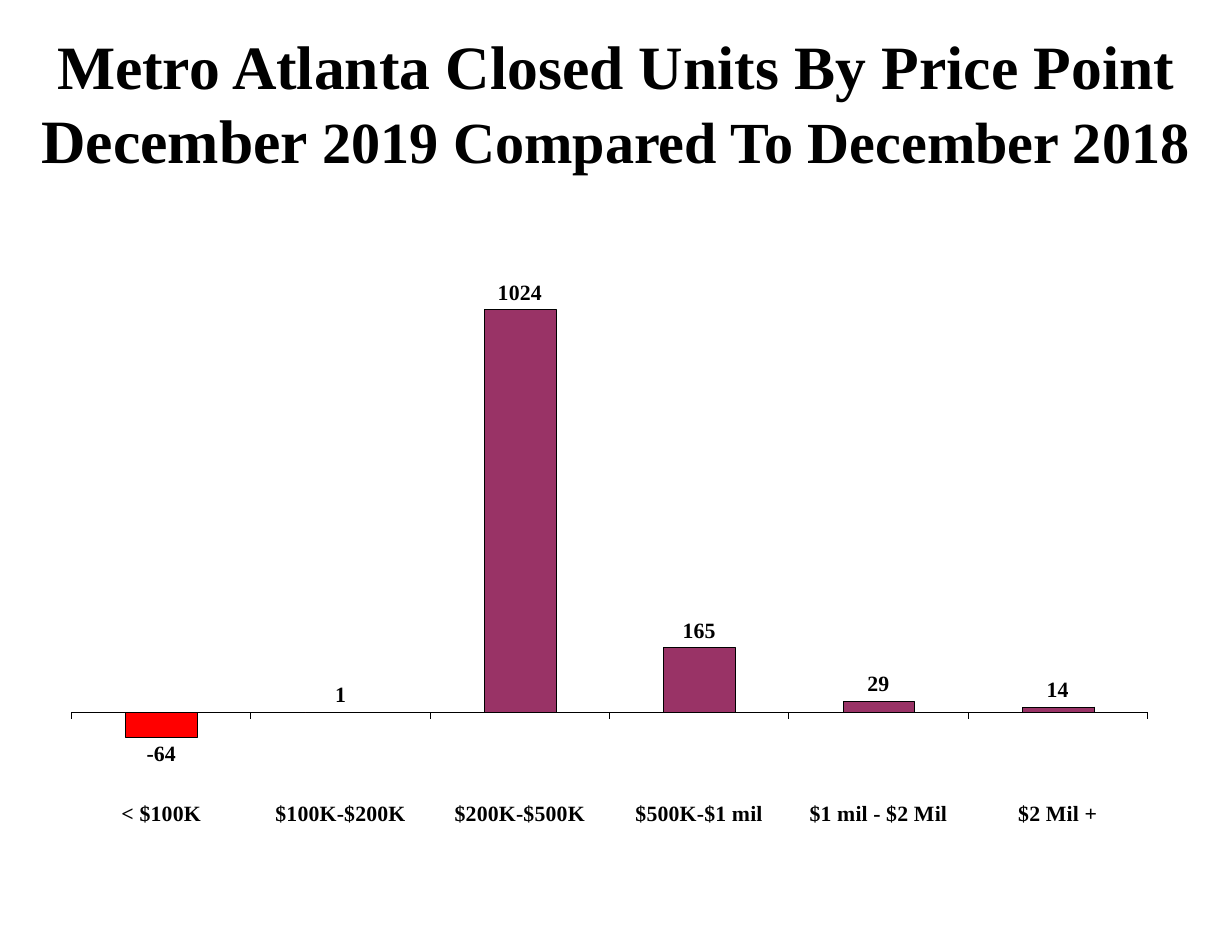
"""Build a slide with a column chart of the change in closed units by price point."""
import pptx
import pptx.chart.data
import pptx.dml.color
import pptx.enum.chart
import pptx.enum.text
import pptx.oxml
import pptx.oxml.ns
import pptx.util

Inches = pptx.util.Inches
Pt = pptx.util.Pt
FONT = "Times New Roman"
COLORS = {"text": "000000", "gain": "993366", "loss": "FF0000"}
UNITS = {
    "< $100K": -64,
    "$100K-$200K": 1,
    "$200K-$500K": 1024,
    "$500K-$1 mil": 165,
    "$1 mil - $2 Mil": 29,
    "$2 Mil +": 14,
}


def rgb(name):
    return pptx.dml.color.RGBColor.from_string(COLORS[name])


def style_font(font, size):
    font.name = FONT
    font.size = Pt(size)
    font.bold = True
    font.color.rgb = rgb("text")


prs = pptx.Presentation()
prs.slide_width = Inches(11)
prs.slide_height = Inches(8.5)
s = prs.slides.add_slide(prs.slide_layouts[6])

data = pptx.chart.data.CategoryChartData(number_format="0")
data.categories = list(UNITS)
data.add_series("Series 1", list(UNITS.values()))
chart = s.shapes.add_chart(
    pptx.enum.chart.XL_CHART_TYPE.COLUMN_CLUSTERED,
    Inches(0.64), Inches(0.68), Inches(10.94), Inches(6.9), data,
).chart
chart.has_title = False
chart.has_legend = False
style_font(chart.font, 14)

cat_axis = chart.category_axis
cat_axis.tick_label_position = pptx.enum.chart.XL_TICK_LABEL_POSITION.LOW
cat_axis.major_tick_mark = pptx.enum.chart.XL_TICK_MARK.OUTSIDE
cat_axis.format.line.color.rgb = rgb("text")
cat_axis.format.line.width = Pt(0.01)

val_axis = chart.value_axis
val_axis.minimum_scale = -200
val_axis.maximum_scale = 1200
val_axis.has_major_gridlines = False
val_axis.visible = False

plot = chart.plots[0]
plot.gap_width = 150
plot.vary_by_categories = False
series = plot.series[0]
series.invert_if_negative = False
bars = [(series, "gain"), (series.points[0], "loss"), (series.points[1], "loss")]
for bar, color in bars:
    bar.format.fill.solid()
    bar.format.fill.fore_color.rgb = rgb(color)
    bar.format.line.color.rgb = rgb("text")
    bar.format.line.width = Pt(0.06)

labels = series.data_labels
labels.show_value = True
labels.number_format = "0"
labels.number_format_is_linked = False
labels.position = pptx.enum.chart.XL_LABEL_POSITION.OUTSIDE_END
style_font(labels.font, 14)

plot_area = chart._chartSpace.chart.plotArea
for old in plot_area.findall(pptx.oxml.ns.qn("c:layout")):
    plot_area.remove(old)
plot_area.insert(0, pptx.oxml.parse_xml(
    f'<c:layout {pptx.oxml.ns.nsdecls("c")}><c:manualLayout>'
    '<c:layoutTarget val="inner"/><c:xMode val="edge"/><c:yMode val="edge"/>'
    '<c:x val="0"/><c:y val="0.212"/><c:w val="0.878"/><c:h val="0.713"/>'
    '</c:manualLayout></c:layout>'
))

title = s.shapes.add_textbox(Inches(0), Inches(0.68), Inches(11), Inches(0.46))
tf = title.text_frame
tf.word_wrap = True
tf.vertical_anchor = pptx.enum.text.MSO_ANCHOR.MIDDLE
p = tf.paragraphs[0]
p.alignment = pptx.enum.text.PP_ALIGN.CENTER
r = p.add_run()
r.text = "Metro Atlanta Closed Units By Price Point"
style_font(r.font, 39.6)
p.add_line_break()
for text, size in [("December ", 39.6), ("2019 Compared To December 2018", 37.4)]:
    r = p.add_run()
    r.text = text
    style_font(r.font, size)

prs.save("out.pptx")
